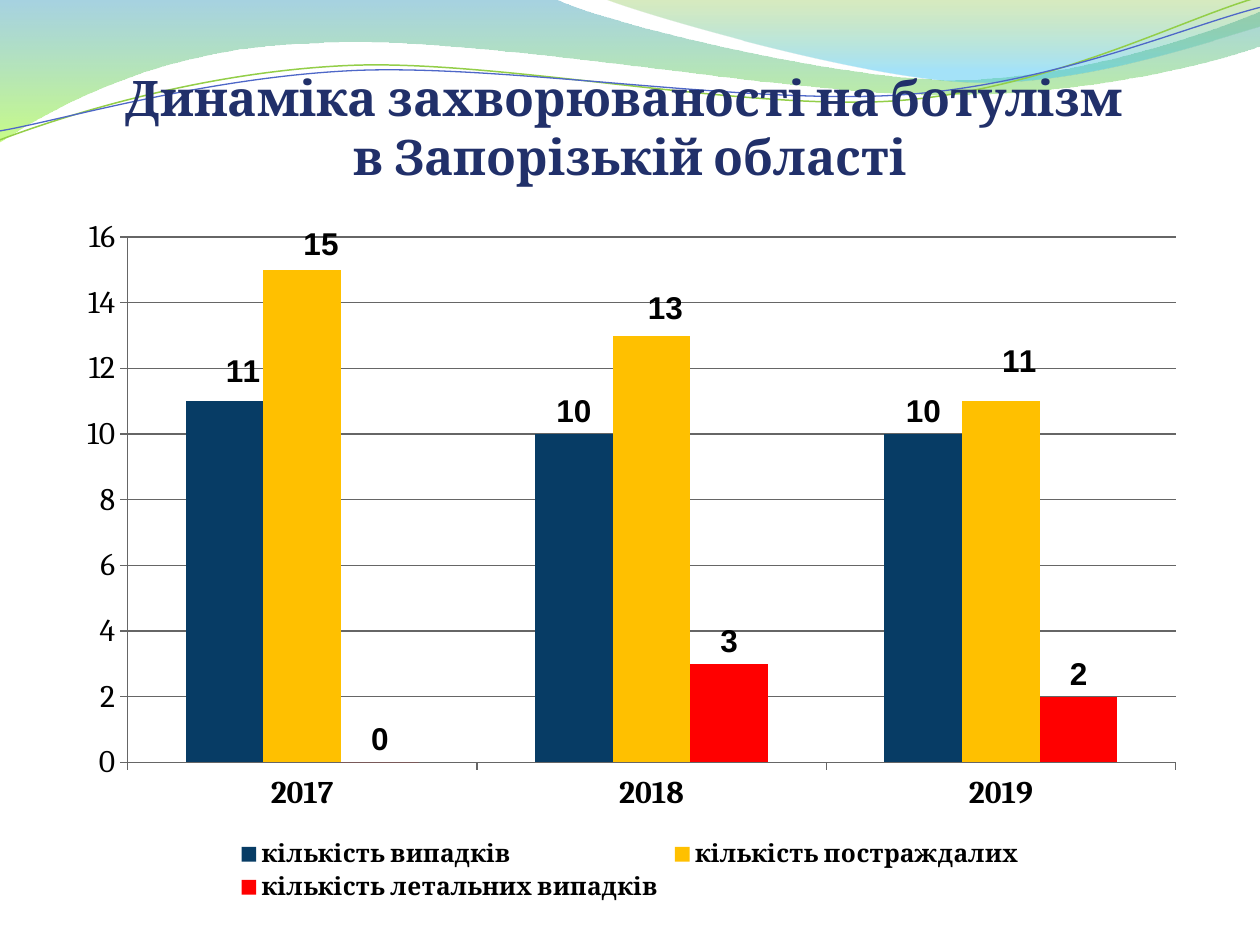
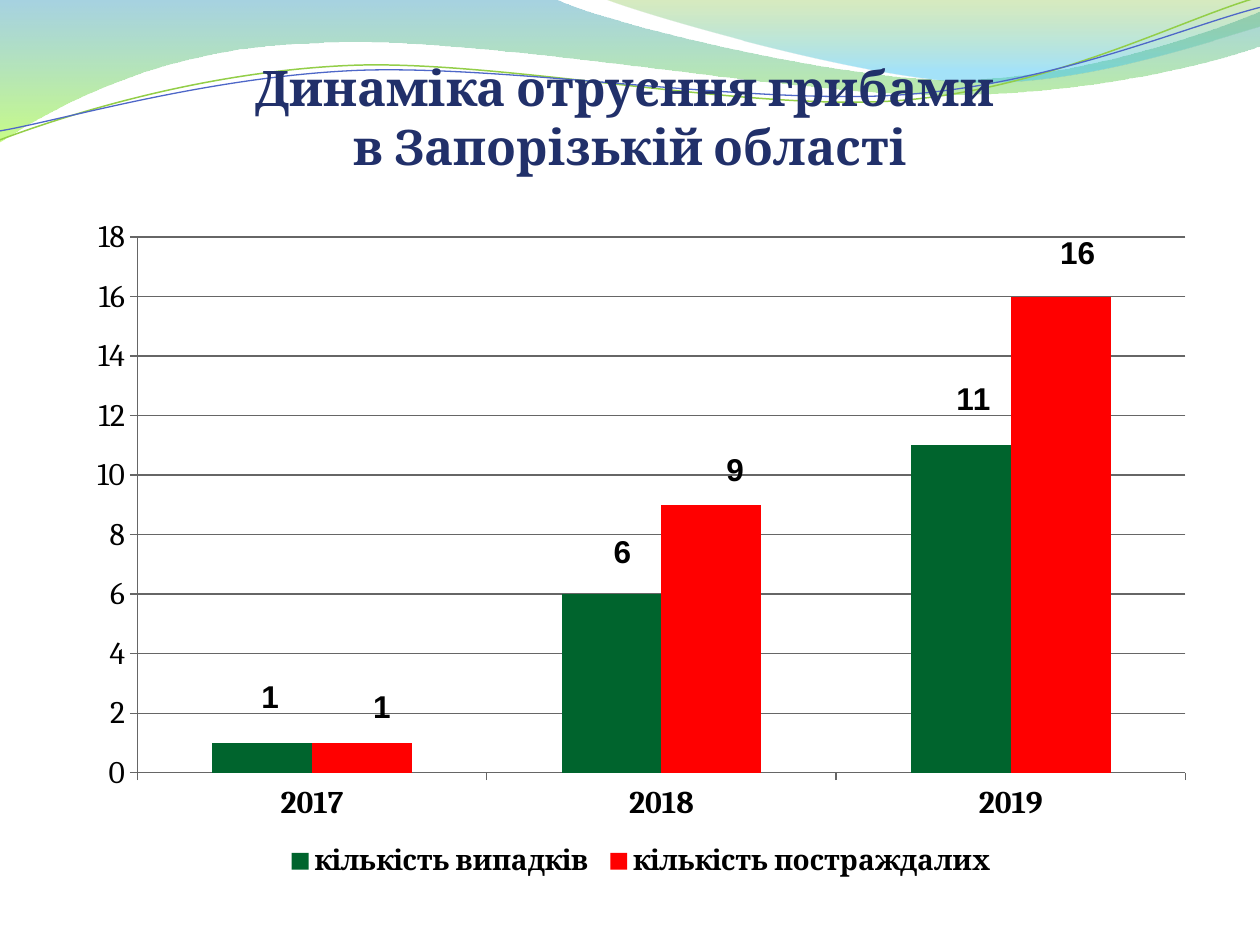
from lxml.etree import SubElement
from pptx import Presentation
from pptx.chart.data import CategoryChartData
from pptx.dml.color import RGBColor
from pptx.enum.chart import XL_CHART_TYPE, XL_LABEL_POSITION, XL_LEGEND_POSITION, XL_TICK_MARK
from pptx.enum.text import MSO_ANCHOR, PP_ALIGN
from pptx.oxml import parse_xml
from pptx.oxml.ns import nsdecls, qn
from pptx.util import Cm, Pt

FONT = "Cambria"
LABEL_FONT = "Arial"
NAVY, BLACK, GREY, RED = "21306A", "000000", "666666", "FF0000"
YEARS = ["2017", "2018", "2019"]

# Outlines in centimetres: a pair is a line target, a triple of pairs is a cubic curve.
BANDS = [
    ([(0, 0), (11.18, -0.03),
      ((12.09, 0.43), (16.87, 1.6), (19.25, 1.6)),
      ((21.67, 1.6), (24.33, 0.66), (25.4, 0.23)),
      (25.43, 0.91),
      ((24.97, 1.12), (22.1, 1.93), (18.95, 1.91)),
      ((15.8, 1.91), (9.7, 0.71), (6.53, 0.86)),
      ((3.28, 0.91), (1.17, 2.11), (-0.03, 2.87))],
     [(0, "3B9CBF", 45), (1, "9CFA24", 55)]),
    ([(12.17, -0.03),
      ((12.93, 0.28), (17.32, 1.57), (19.53, 1.65)),
      ((21.74, 1.75), (24.41, 0.81), (25.4, 0.53)),
      (25.4, 0)],
     [(0, "7EBE2C", 30), (0.8, "39C1F1", 45)]),
]
WAVES = [
    ([(0, 2.82),
      ((1.22, 2.36), (4.01, 1.45), (7.04, 1.32)),
      ((10.03, 1.19), (15.06, 2.26), (18.11, 2.03)),
      ((21.16, 1.8), (23.83, 0.38), (25.35, -0.05))], "93CE48", 0.85),
    ([(0, 2.64),
      ((1.19, 2.44), (4.17, 1.55), (7.19, 1.42)),
      ((10.24, 1.3), (15.16, 2.13), (18.21, 1.91)),
      ((21.23, 1.7), (23.9, 0.53), (25.4, 0.15))], "4E67C8", 0.75),
]

# Series: name, values, colour, label shifts in centimetres by point index.
BOTULISM = {
    "title": ["Динаміка захворюваності на ботулізм ", "в Запорізькій області"],
    "title_height": 3.73,
    "box": (1.3, 4.11, 22.86, 14.17),
    "plot": (1.27, 0.67, 21.13, 10.59),
    "legend": (3.4, 12.74, 16, 1.41),
    "legend_size": 14,
    "maximum": 16,
    "series": [
        ("кількість випадків", [11, 10, 10], "073C65", {0: (0.38, -0.14)}),
        ("кількість постраждалих", [15, 13, 11], "FFC000",
         {0: (0.38, -0.06), 1: (0.28, -0.09), 2: (0.38, -0.34)}),
        ("кількість летальних випадків", [0, 3, 2], RED, {}),
    ],
}
MUSHROOMS = {
    "title": ["Динаміка отруєння грибами ", "в Запорізькій області"],
    "title_height": 3.53,
    "box": (1.5, 4.11, 22.86, 13.77),
    "plot": (1.27, 0.67, 21.13, 10.8),
    "legend": (4.13, 13.02, 14.6, 0.77),
    "legend_size": 16,
    "maximum": 18,
    "series": [
        ("кількість випадків", [1, 6, 11], "00642D",
         {0: (0.16, -0.46), 1: (0.22, -0.38), 2: (0.26, -0.48)}),
        ("кількість постраждалих", [1, 9, 16], RED,
         {0: (0.4, -0.26), 1: (0.48, -0.24), 2: (0.34, -0.42)}),
    ],
}


def color(value):
    return RGBColor.from_string(value)


def style_font(font, size, value=BLACK, bold=False, name=FONT):
    font.name, font.size, font.bold = name, Pt(size), bold
    font.color.rgb = color(value)


def add_outline(slide, outline, close):
    """Draw an outline through all its points, then join each triple into a curve."""
    start, *steps = outline
    groups = [step if len(step) == 3 else (step,) for step in steps]
    targets = [(Cm(x), Cm(y)) for group in groups for x, y in group]
    builder = slide.shapes.build_freeform(Cm(start[0]), Cm(start[1]))
    builder.add_line_segments(targets, close=close)
    shape = builder.convert_to_shape()
    shape.shadow.inherit = False

    lines = iter(list(shape._element.iter(qn("a:lnTo"))))
    for group in groups:
        segment = [next(lines) for _ in group]
        if len(segment) == 3:
            curve = parse_xml(f"<a:cubicBezTo {nsdecls('a')}/>")
            segment[0].addprevious(curve)
            for line in segment:
                curve.append(line[0])
                line.getparent().remove(line)
    return shape


def add_header_waves(slide):
    for outline, stops in BANDS:
        band = add_outline(slide, outline, close=True)
        band.line.fill.background()
        band.fill.gradient()
        band.fill.gradient_angle = 270
        for stop, (position, value, _) in zip(band.fill.gradient_stops, stops):
            stop.position = position
            stop.color.rgb = color(value)
        for element, (_, _, opacity) in zip(band._element.spPr.iter(qn("a:srgbClr")), stops):
            SubElement(element, qn("a:alpha")).set("val", str(opacity * 1000))
    for outline, value, width in WAVES:
        wave = add_outline(slide, outline, close=False)
        wave.fill.background()
        wave.line.color.rgb = color(value)
        wave.line.width = Pt(width)


def add_title(slide, lines, left, top, width, height):
    frame = slide.shapes.add_textbox(Cm(left), Cm(top), Cm(width), Cm(height)).text_frame
    frame.word_wrap = True
    frame.vertical_anchor = MSO_ANCHOR.BOTTOM
    frame.margin_left = frame.margin_right = frame.margin_bottom = 0
    frame.margin_top = Cm(0.13)
    paragraph = frame.paragraphs[0]
    paragraph.alignment = PP_ALIGN.CENTER
    for index, line in enumerate(lines):
        if index:
            paragraph.add_line_break()
        run = paragraph.add_run()
        run.text = line
        style_font(run.font, 28, NAVY, bold=True)


def manual_layout(chart_size, x, y, width=None, height=None, inner=False):
    """Make a c:layout from lengths in centimetres within the chart."""
    chart_width, chart_height = chart_size
    settings = [("layoutTarget", "inner")] if inner else []
    if width:
        settings += [("xMode", "edge"), ("yMode", "edge")]
    settings += [("x", x / chart_width), ("y", y / chart_height)]
    if width:
        settings += [("w", width / chart_width), ("h", height / chart_height)]
    layout = parse_xml(f"<c:layout {nsdecls('c')}><c:manualLayout/></c:layout>")
    for tag, value in settings:
        SubElement(layout[0], qn(f"c:{tag}")).set("val", str(value))
    return layout


def hide_leader_lines(labels):
    element = labels._element
    leader = element.find(qn("c:showLeaderLines"))
    if leader is None:
        leader = SubElement(element, qn("c:showLeaderLines"))
    leader.set("val", "0")


def style_series(series, value, shifts, chart_size):
    series.format.fill.solid()
    series.format.fill.fore_color.rgb = color(value)
    series.invert_if_negative = False
    labels = series.data_labels
    labels.show_value = True
    labels.position = XL_LABEL_POSITION.OUTSIDE_END
    style_font(labels.font, 18, bold=True, name=LABEL_FONT)
    hide_leader_lines(labels)
    for index in shifts:
        label = series.points[index].data_label
        label.position = XL_LABEL_POSITION.OUTSIDE_END
        style_font(label.font, 18, bold=True, name=LABEL_FONT)
    for element, shift in zip(series._element.iter(qn("c:dLbl")), shifts.values()):
        element.find(qn("c:idx")).addnext(manual_layout(chart_size, *shift))


def style_axes(chart, maximum):
    for axis, bold in ((chart.category_axis, True), (chart.value_axis, False)):
        style_font(axis.tick_labels.font, 18, bold=bold)
        axis.major_tick_mark = XL_TICK_MARK.OUTSIDE
        axis.minor_tick_mark = XL_TICK_MARK.NONE
        axis.format.line.color.rgb = color(GREY)
        axis.format.line.width = Pt(0.75)
    axis = chart.value_axis
    axis.minimum_scale, axis.maximum_scale, axis.major_unit = 0, maximum, 2
    axis.has_major_gridlines = True
    axis.major_gridlines.format.line.color.rgb = color(GREY)
    axis.major_gridlines.format.line.width = Pt(0.75)


def add_column_chart(slide, content):
    box = content["box"]
    chart_size = box[2:]
    data = CategoryChartData()
    data.categories = YEARS
    for name, values, _, _ in content["series"]:
        data.add_series(name, values)
    chart = slide.shapes.add_chart(XL_CHART_TYPE.COLUMN_CLUSTERED, *map(Cm, box), data).chart
    style_font(chart.font, 18)
    chart.has_title = False
    plot = chart.plots[0]
    plot.gap_width, plot.overlap, plot.vary_by_categories = 150, 0, False
    for series, (_, _, value, shifts) in zip(plot.series, content["series"]):
        style_series(series, value, shifts, chart_size)
    style_axes(chart, content["maximum"])

    chart.has_legend = True
    legend = chart.legend
    legend.position = XL_LEGEND_POSITION.BOTTOM
    legend.include_in_layout = False
    style_font(legend.font, content["legend_size"], bold=True)
    for layout in legend._element.findall(qn("c:layout")):
        legend._element.remove(layout)
    legend._element.find(qn("c:legendPos")).addnext(manual_layout(chart_size, *content["legend"]))

    plot_area = chart._chartSpace.chart.plotArea
    for layout in plot_area.findall(qn("c:layout")):
        plot_area.remove(layout)
    plot_area.insert(0, manual_layout(chart_size, *content["plot"], inner=True))


def add_chart_slide(presentation, content):
    slide = presentation.slides.add_slide(presentation.slide_layouts[6])
    add_header_waves(slide)
    add_title(slide, content["title"], 1.27, 0, 22.86, content["title_height"])
    add_column_chart(slide, content)


def main():
    presentation = Presentation()
    presentation.slide_width, presentation.slide_height = Cm(25.4), Cm(19.05)
    for content in (BOTULISM, MUSHROOMS):
        add_chart_slide(presentation, content)
    presentation.save("out.pptx")


if __name__ == "__main__":
    main()
